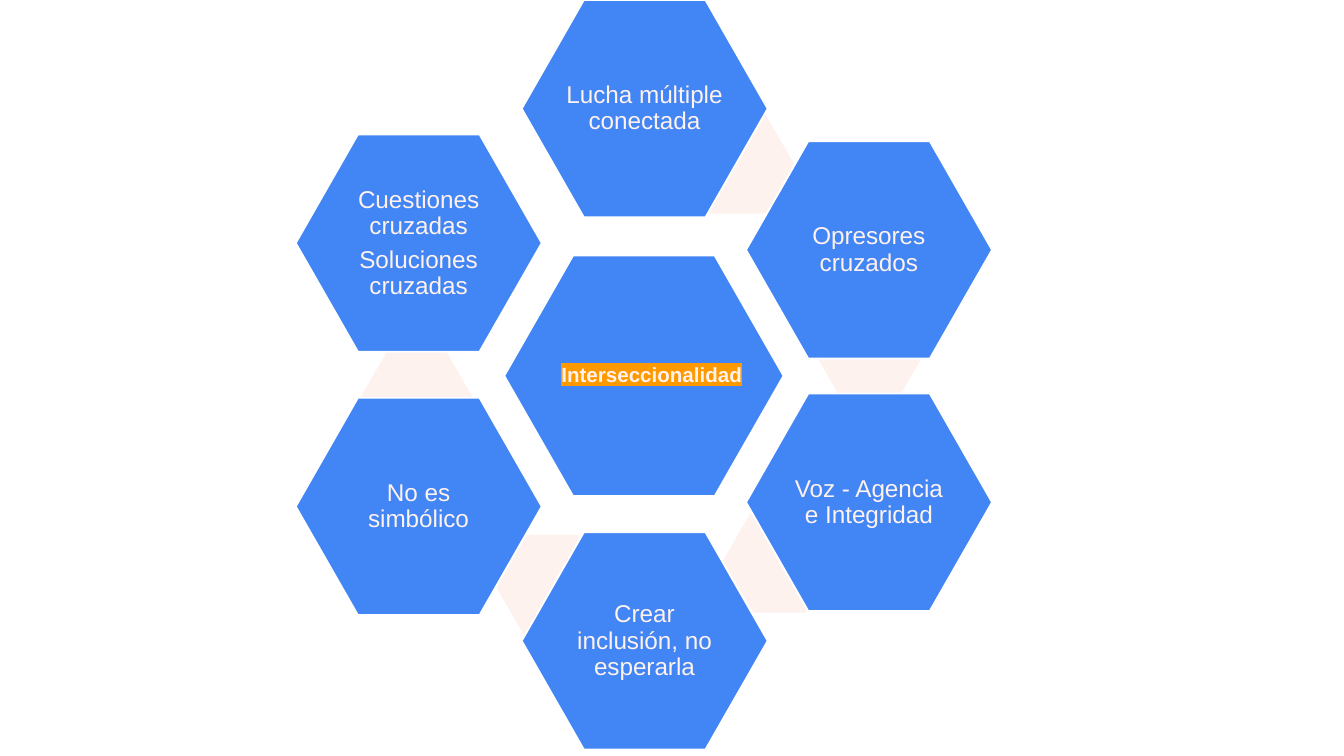
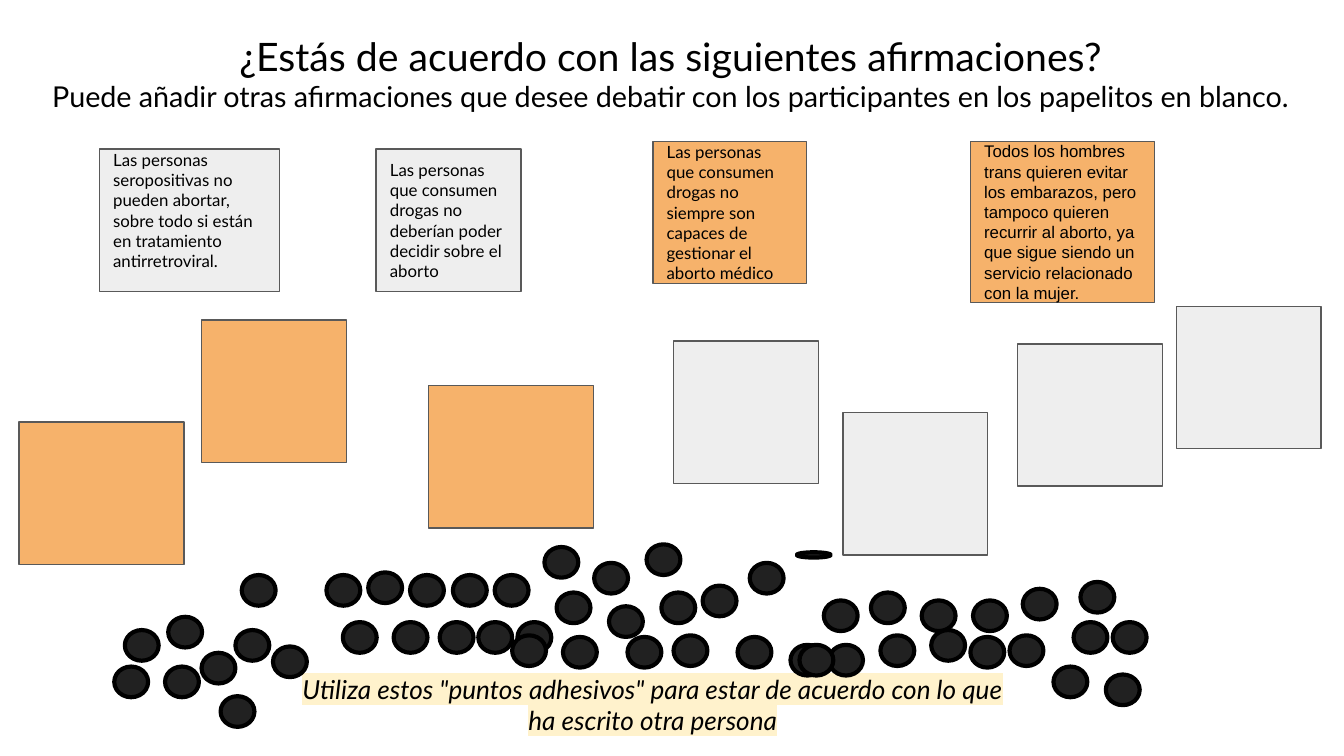
"""Build two workshop slides: an intersectionality wheel and a board of statements."""
from lxml import etree
from pptx import Presentation
from pptx import util as u
from pptx.dml.color import RGBColor
from pptx.enum import shapes, text
from pptx.oxml.ns import qn

BLUE = RGBColor(0x42, 0x85, 0xF4)
BLUSH = RGBColor(0xFE, 0xF2, 0xEE)
WHITE = RGBColor(0xFF, 0xFF, 0xFF)
BLACK = RGBColor(0, 0, 0)
CHARCOAL = RGBColor(0x21, 0x21, 0x21)
OUTLINE = RGBColor(0x59, 0x59, 0x59)
GREY = RGBColor(0xEE, 0xEE, 0xEE)
ORANGE = RGBColor(0xF6, 0xB2, 0x6B)
AMBER = RGBColor(0xFF, 0x99, 0x00)
CREAM = RGBColor(0xFF, 0xF2, 0xCC)

PETAL_SIZE = (4.65, 4.11)
LINK_SIZE = (2.13, 1.88)
DOT_SIZE = (0.64, 0.58)
NOTE_HEIGHT = 2.69
NOTE_INSET = 0.26

PETALS = [
    ((9.86, 0), (12.88, 2.16), ["Lucha múltiple conectada"]),
    ((14.1, 2.67), (15.37, 5.69), ["Opresores cruzados"]),
    ((14.1, 7.44), (13.64, 9.7), ["Voz - Agencia e Integridad"]),
    ((9.86, 10.06), (9.35, 10.11), ["Crear inclusión, no esperarla"]),
    ((5.59, 7.52), (6.81, 6.58), ["No es simbólico"]),
    ((5.59, 2.54), None, ["Cuestiones cruzadas", "Soluciones cruzadas"]),
]

STATEMENTS = [
    ((1.88, 2.82, 3.4, NOTE_HEIGHT), GREY, "Lato", 0.64,
     "Las personas seropositivas no pueden abortar, sobre todo si están "
     "en tratamiento antirretroviral."),
    ((7.11, 2.82, 2.74, NOTE_HEIGHT), GREY, "Lato", NOTE_INSET,
     "Las personas que consumen drogas no deberían poder decidir sobre el aborto"),
    ((12.34, 2.67, 2.9, NOTE_HEIGHT), ORANGE, "Lato", NOTE_INSET,
     "Las personas que consumen drogas no siempre son capaces de gestionar "
     "el aborto médico"),
    ((18.34, 2.67, 3.48, 3.05), ORANGE, "Arial", NOTE_INSET,
     "Todos los hombres trans quieren evitar los embarazos, pero tampoco quieren "
     "recurrir al aborto, ya que sigue siendo un servicio relacionado con la mujer."),
]

BLANK_NOTES = [
    (19.23, 6.5, 2.74, GREY), (15.93, 7.8, 2.74, GREY),
    (22.23, 5.79, 2.74, GREY), (12.73, 6.45, 2.74, GREY),
    (3.81, 6.05, 2.74, ORANGE), (0.36, 7.98, 3.12, ORANGE),
    (8.1, 7.29, 3.12, ORANGE),
]

DOT_ROWS = {
    10.29: [12.22],
    10.34: [10.29],
    10.64: [11.23, 14.17],
    10.82: [6.96],
    10.87: [4.57, 6.17, 7.75, 8.56, 9.35],
    11.0: [20.42],
    11.07: [13.28],
    11.13: [19.33],
    11.2: [10.52, 12.5, 16.46],
    11.35: [15.57, 17.42, 18.39],
    11.46: [11.51],
    11.66: [3.18],
    11.76: [6.48, 7.44, 8.31, 9.04, 9.78, 20.29, 21.03],
    11.91: [2.36, 4.45, 17.6],
    12.01: [9.68, 12.73, 16.64, 19.08],
    12.04: [10.64, 11.86, 13.94, 18.34],
    12.19: [15.67, 14.94, 15.11],
    12.22: [5.16],
    12.34: [3.81],
    12.6: [2.16, 3.12, 19.91],
    12.75: [20.9],
    13.16: [4.17],
}


def apply(target, values):
    """Set every attribute named in values on the target."""
    for name, value in values.items():
        setattr(target, name, value)


class Board:
    """Hold the deck's style and the slide being drawn."""

    def __init__(self):
        """Start an empty widescreen deck."""
        self.deck = Presentation()
        apply(self.deck, {"slide_width": u.Cm(25.4), "slide_height": u.Cm(14.29)})
        self.page = None

    def new_page(self):
        """Add a blank slide and make it current."""
        self.page = self.deck.slides.add_slide(self.deck.slide_layouts[6])

    def shape(self, kind, at, fill, line=None, weight=1):
        """Draw a filled preset shape, outlined if a line colour is given."""
        item = self.page.shapes.add_shape(kind, *map(u.Cm, at))
        item.shadow.inherit = False
        item.fill.solid()
        item.fill.fore_color.rgb = fill
        if line is None:
            item.line.fill.background()
        else:
            item.line.color.rgb = line
            item.line.width = u.Pt(weight)
        return item

    def frame(self, item, inset, anchor, bottom=None):
        """Prepare the text frame of a shape or box."""
        edge = u.Cm(inset)
        apply(item.text_frame, {
            "word_wrap": True, "vertical_anchor": anchor,
            "margin_left": edge, "margin_top": edge, "margin_right": edge,
            "margin_bottom": edge if bottom is None else u.Cm(bottom),
        })
        return item.text_frame

    def text_box(self, at, inset, anchor=text.MSO_ANCHOR.TOP):
        """Add a wrapping text box and return its frame."""
        box = self.page.shapes.add_textbox(*map(u.Cm, at))
        return self.frame(box, inset, anchor)

    def span(self, para, words, size, color, font="Lato", highlight=None, **style):
        """Add a formatted run to a paragraph."""
        span = para.add_run()
        span.text = words
        span.font.color.rgb = color
        apply(span.font, {"size": u.Pt(size), "name": font, **style})
        if highlight is not None:
            mark = etree.Element(qn("a:highlight"))
            etree.SubElement(mark, qn("a:srgbClr"), val=str(highlight))
            span._r.get_or_add_rPr().find(qn("a:solidFill")).addnext(mark)

    def hexagon(self, at, fill, line=None, corner=0.286):
        """Draw a hexagon with the given corner proportion."""
        item = self.shape(shapes.MSO_SHAPE.HEXAGON, at, fill, line)
        item.adjustments[0] = corner

    def hexagon_label(self, at, lines, size, **style):
        """Centre tight paragraphs over a hexagon."""
        frame = self.text_box(at, 0.04, text.MSO_ANCHOR.MIDDLE)
        for index, words in enumerate(lines):
            para = frame.add_paragraph() if index else frame.paragraphs[0]
            apply(para, {"alignment": text.PP_ALIGN.CENTER, "line_spacing": 0.9,
                         "space_before": u.Pt(4 if index else 0)})
            self.span(para, words, size, BLUSH, "Arial", **style)

    def petal(self, corner, link, lines):
        """Draw an outer hexagon, its label and the link behind it."""
        if link:
            self.hexagon((*link, *LINK_SIZE), BLUSH, corner=0.289)
        self.hexagon((*corner, *PETAL_SIZE), BLUE, WHITE)
        left, top = corner
        self.hexagon_label((left + 0.77, top + 0.69, 3.1, 2.74), lines, 13)

    def note(self, at, fill):
        """Draw a sticky note."""
        return self.shape(shapes.MSO_SHAPE.RECTANGLE, at, fill, OUTLINE, 0.75)

    def statement(self, at, fill, font, bottom, words):
        """Draw a sticky note that carries a statement."""
        frame = self.frame(self.note(at, fill), NOTE_INSET,
                           text.MSO_ANCHOR.MIDDLE, bottom)
        para = frame.paragraphs[0]
        para.alignment = text.PP_ALIGN.LEFT
        self.span(para, words, 9, BLACK, font)

    def dot(self, left, top, size=DOT_SIZE):
        """Draw an adhesive dot."""
        self.shape(shapes.MSO_SHAPE.OVAL, (left, top, *size), CHARCOAL, BLACK, 2.25)

    def centred_para(self, at):
        """Add a text box and return its centred paragraph."""
        para = self.text_box(at, 0.25).paragraphs[0]
        para.alignment = text.PP_ALIGN.CENTER
        return para


def draw_wheel(board):
    """Draw the intersectionality wheel."""
    board.new_page()
    board.hexagon((9.53, 4.83, 5.28, 4.55), BLUE, WHITE)
    board.hexagon_label((10.39, 5.56, 3.86, 3.07), ["Interseccionalidad"], 11,
                        highlight=AMBER, bold=True)
    for petal in PETALS:
        board.petal(*petal)


def draw_statements(board):
    """Draw the statements, the blank notes and the adhesive dots."""
    board.new_page()
    title = board.centred_para((0.38, 0.36, 24.59, 2.95))
    board.span(title, "¿Estás de acuerdo con las siguientes afirmaciones?", 21, BLACK)
    title.add_line_break()
    board.span(title, "Puede añadir otras afirmaciones que desee debatir con los "
               "participantes en los papelitos en blanco.", 15.4, BLACK)
    hint = board.centred_para((5.28, 12.47, 14.12, 1.37))
    board.span(hint, 'Utiliza estos "puntos adhesivos" para estar de acuerdo con lo que '
               "ha escrito otra persona", 14, BLACK, highlight=CREAM, italic=True)
    for statement in STATEMENTS:
        board.statement(*statement)
    for left, top, width, fill in BLANK_NOTES:
        board.note((left, top, width, NOTE_HEIGHT), fill)
    board.dot(15.06, 10.44, (0.64, 0.1))
    for top, lefts in DOT_ROWS.items():
        for left in lefts:
            board.dot(left, top)


def main():
    """Build and save the deck."""
    board = Board()
    draw_wheel(board)
    draw_statements(board)
    board.deck.save("out.pptx")


if __name__ == "__main__":
    main()
